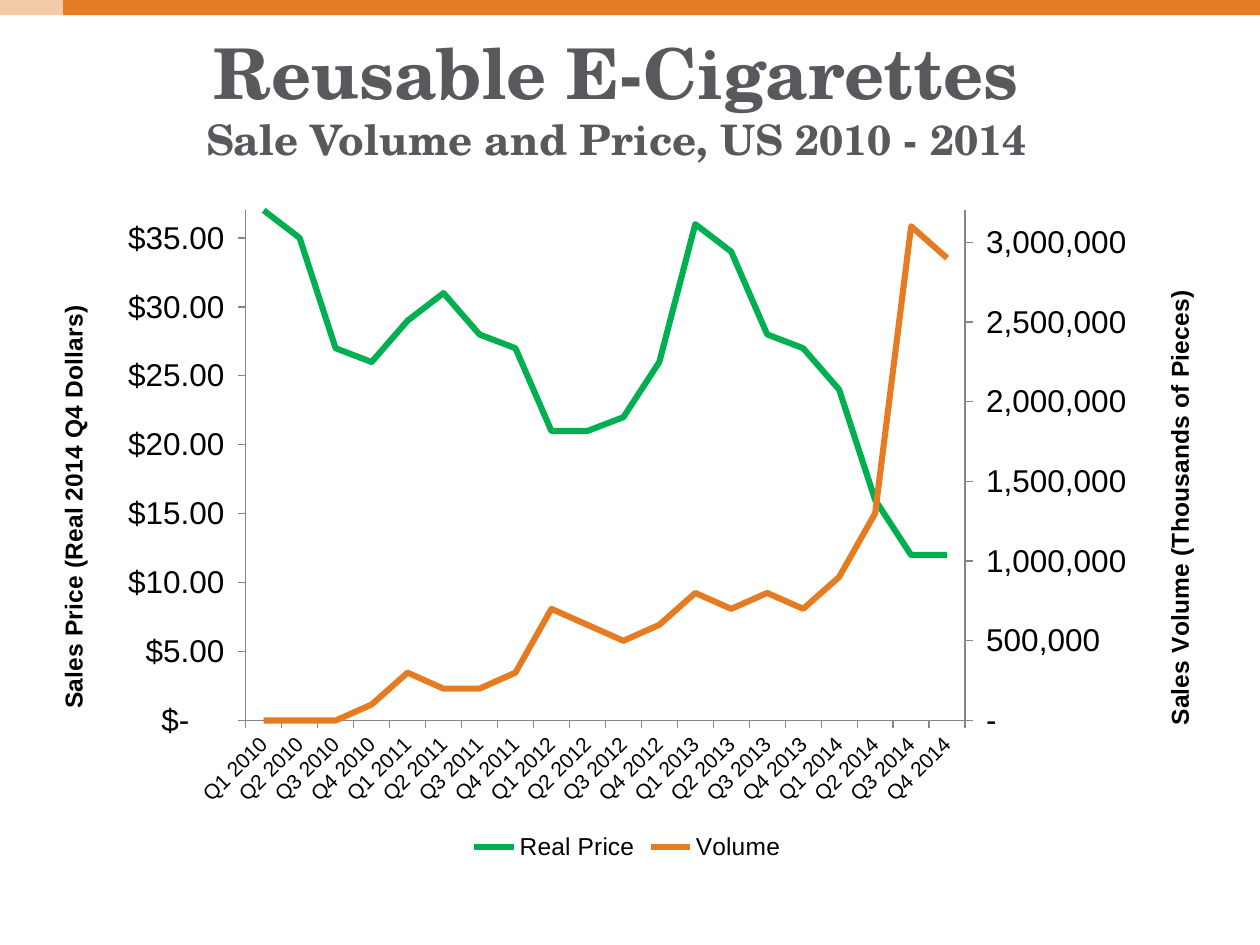
from copy import deepcopy

from lxml import etree
from pptx import Presentation
from pptx import util as u
from pptx.chart.data import CategoryChartData
from pptx.dml.color import RGBColor
from pptx.enum import chart as ch, shapes, text
from pptx.oxml.ns import qn

ORANGE = RGBColor(0xE5, 0x7C, 0x23)
PEACH = RGBColor(0xF5, 0xCB, 0xA7)
GREEN = RGBColor(0x00, 0xB0, 0x50)
GRAY = RGBColor(0x58, 0x59, 0x5C)
AXIS_GRAY = RGBColor(0x86, 0x86, 0x86)
BLACK = RGBColor(0, 0, 0)

PRICES = [37, 35, 27, 26, 29, 31, 28, 27, 21, 21, 22, 26, 36, 34, 28, 27, 24, 16, 12, 12]
VOLUMES = [n * 100000 for n in (0, 0, 0, 1, 3, 2, 2, 3, 7, 6, 5, 6, 8, 7, 8, 7, 9, 13, 31, 29)]
PRICE_FORMAT = '_("$"* #,##0.00_);_("$"* \\(#,##0.00\\);_("$"* "-"??_);_(@_)'
VOLUME_FORMAT = '_(* #,##0_);_(* \\(#,##0\\);_(* "-"??_);_(@_)'
CHART_W, CHART_H = 9.48, 5.31


def set_layout(parent, index, **inches):
    """Place a chart part by inches from the chart's top left corner."""
    layout = parent.find(qn("c:layout"))
    if layout is None:
        layout = etree.Element(qn("c:layout"))
        parent.insert(index, layout)
    for child in list(layout):
        layout.remove(child)
    manual = etree.SubElement(layout, qn("c:manualLayout"))
    if "w" in inches:
        etree.SubElement(manual, qn("c:layoutTarget")).set("val", "inner")
    for mode in ("xMode", "yMode"):
        etree.SubElement(manual, qn(f"c:{mode}")).set("val", "edge")
    for name, length in inches.items():
        share = length / (CHART_W if name in "xw" else CHART_H)
        etree.SubElement(manual, qn(f"c:{name}")).set("val", str(share))


prs = Presentation()
prs.slide_width, prs.slide_height = u.Inches(10), u.Inches(7.5)
W = prs.slide_width
s = prs.slides.add_slide(prs.slide_layouts[6])

# Top band
for left, width, color in ((0.05, 0.95, ORANGE), (0, 0.05, PEACH)):
    sp = s.shapes.add_shape(shapes.MSO_SHAPE.RECTANGLE, int(W * left), 0,
                            int(W * width), u.Inches(0.12))
    sp.shadow.inherit = False
    sp.fill.solid()
    sp.fill.fore_color.rgb = color
    sp.line.fill.background()

# Title
tf = s.shapes.add_textbox(u.Inches(0.38), u.Inches(0.23), u.Inches(9.02), u.Inches(1.08)).text_frame
for name, value in dict(word_wrap=True, vertical_anchor=text.MSO_ANCHOR.MIDDLE, margin_left=0,
                        margin_right=0, margin_top=0, margin_bottom=0).items():
    setattr(tf, name, value)
p = tf.paragraphs[0]
p.alignment = text.PP_ALIGN.CENTER
for line, size in (("Reusable E-Cigarettes", 40), ("Sale Volume and Price, US 2010 - 2014", 24)):
    if p.runs:
        p.add_line_break()
    r = p.add_run()
    r.text = line
    for name, value in dict(name="TeX Gyre Schola", size=u.Pt(size), bold=True).items():
        setattr(r.font, name, value)
    r.font.color.rgb = GRAY

# Chart with both series on the left axis
data = CategoryChartData()
data.categories = [f"Q{q} {year}" for year in range(2010, 2015) for q in range(1, 5)]
data.add_series("Real Price", PRICES)
data.add_series("Volume", VOLUMES)
chart = s.shapes.add_chart(ch.XL_CHART_TYPE.LINE, u.Inches(0.24), u.Inches(1.56),
                           u.Inches(CHART_W), u.Inches(CHART_H), data).chart
chart.has_title = False
chart.font.name = "Arial"
chart.font.size = u.Pt(10)
chart.font.color.rgb = BLACK
chart.has_legend = True
chart.legend.position = ch.XL_LEGEND_POSITION.BOTTOM
chart.legend.include_in_layout = False
chart.legend.font.size = u.Pt(14)
chart.plots[0].vary_by_categories = False
for series, color in zip(chart.plots[0].series, (GREEN, ORANGE)):
    series.smooth = False
    series.format.line.color.rgb = color
    series.format.line.width = u.Pt(3.5)

cat_axis, val_axis = chart.category_axis, chart.value_axis
for axis, size in ((cat_axis, 12), (val_axis, 18)):
    axis.has_major_gridlines = False
    axis.major_tick_mark = ch.XL_TICK_MARK.OUTSIDE
    axis.minor_tick_mark = ch.XL_TICK_MARK.NONE
    axis.tick_labels.font.size = u.Pt(size)
    axis.format.line.color.rgb = AXIS_GRAY
    axis.format.line.width = u.Pt(0.75)
for name, value in dict(minimum_scale=0, maximum_scale=37, major_unit=5).items():
    setattr(val_axis, name, value)
val_axis.tick_labels.number_format = PRICE_FORMAT
val_axis.tick_labels.number_format_is_linked = False
tf = val_axis.axis_title.text_frame
tf.text = "Sales Price (Real 2014 Q4 Dollars)"
font = tf.paragraphs[0].runs[0].font
for name, value in dict(name="Arial", size=u.Pt(14), bold=True).items():
    setattr(font, name, value)
font.color.rgb = BLACK

plot_area = chart.element.find(".//" + qn("c:plotArea"))
lines, cat, val = (plot_area.find(qn(f"c:{tag}")) for tag in ("lineChart", "catAx", "valAx"))
cat.find(f"{qn('c:txPr')}/{qn('a:bodyPr')}").set("rot", "-2700000")
title_body = val.find(f"{qn('c:title')}//{qn('a:bodyPr')}")
title_body.set("rot", "-5400000")
title_body.set("vert", "horz")

# Move the volume series to a second pair of axes
lines2, cat2, val2 = (deepcopy(part) for part in (lines, cat, val))
lines.remove(lines.findall(qn("c:ser"))[1])
lines2.remove(lines2.find(qn("c:ser")))
new_ids = dict(zip((ax.get("val") for ax in lines.findall(qn("c:axId"))), ("5001", "5002")))
for part in (lines2, cat2, val2):
    for ax in part.iter(qn("c:axId"), qn("c:crossAx")):
        ax.set("val", new_ids[ax.get("val")])
cat2.find(qn("c:delete")).set("val", "1")
for tag, attr, value in (("axPos", "val", "r"), ("crosses", "val", "max"),
                         ("majorUnit", "val", "500000"), ("scaling/max", "val", "3200000"),
                         ("numFmt", "formatCode", VOLUME_FORMAT)):
    val2.find("/".join(qn(f"c:{step}") for step in tag.split("/"))).set(attr, value)
val2.find(".//" + qn("a:t")).text = "Sales Volume (Thousands of Pieces)"
lines.addnext(lines2)
val.addnext(val2)
val2.addnext(cat2)

set_layout(plot_area, 0, x=1.71, y=0.11, w=5.71, h=4.05)
set_layout(val.find(qn("c:title")), 1, x=0.18, y=0.83)
set_layout(val2.find(qn("c:title")), 1, x=8.96, y=0.71)

prs.save("out.pptx")
